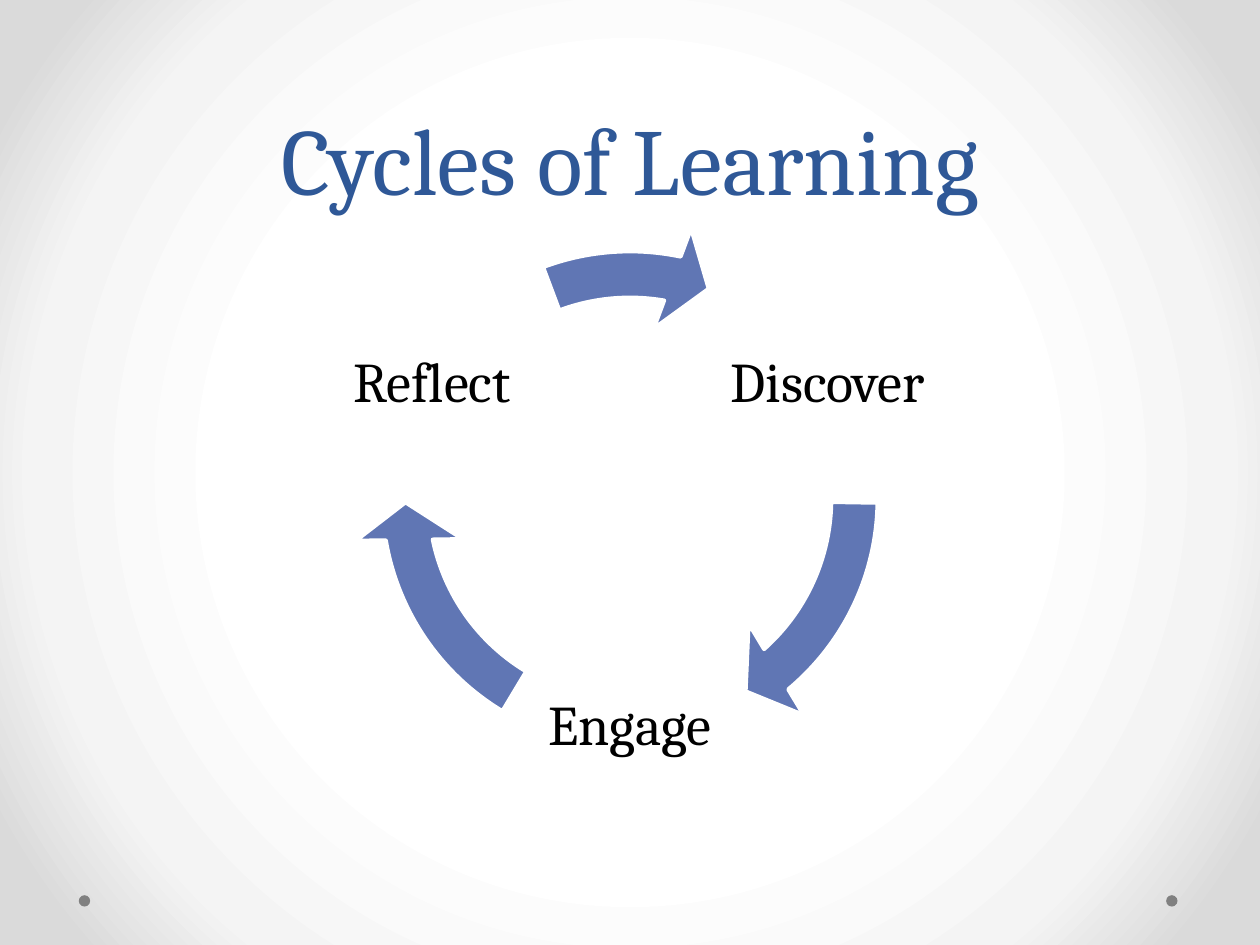
from pptx import Presentation
from pptx.dml.color import RGBColor
from pptx.enum.shapes import MSO_SHAPE
from pptx.enum.text import MSO_ANCHOR, MSO_AUTO_SIZE, PP_ALIGN
from pptx.oxml import parse_xml
from pptx.oxml.ns import nsdecls
from pptx.util import Inches, Pt

TITLE = "Cycles of Learning"
STAGES = [("Discover", 6.57, 3.05), ("Engage", 5, 5.77), ("Reflect", 3.43, 3.05)]
ARROWS = [(0.89, 49.36), (121.03, 169.5), (249.48, 280.91)]
BACKDROP = [(50, "FFFFFF"), (76, "F4F4F4"), (92, "DADADA")]

FONT = "Cambria"
NAVY = RGBColor(0x2F, 0x58, 0x97)
BLUE = RGBColor(0x60, 0x76, 0xB4)
GREY = RGBColor(0x80, 0x80, 0x80)
BLACK = RGBColor(0, 0, 0)
WHITE = RGBColor(0xFF, 0xFF, 0xFF)

WIDTH, HEIGHT = 10, 7.5
LABEL, RING, DOT = 1.87, 4.41, 0.09
RING_CENTER = (WIDTH / 2, 3.96)
THICKNESS, HEAD_WIDTH, HEAD_ANGLE = 0.083, 0.096, 9.61


def square(cx, cy, size):
    return [Inches(v) for v in (cx - size / 2, cy - size / 2, size, size)]


def degrees(angle):
    return angle * 60000 / 100000


def write(shape, text, size, color, anchor, spacing, margin=None):
    tf = shape.text_frame
    tf.word_wrap = True
    tf.auto_size = MSO_AUTO_SIZE.NONE
    tf.vertical_anchor = anchor
    if margin is not None:
        tf.margin_left = tf.margin_right = Inches(margin)
        tf.margin_top = tf.margin_bottom = Inches(margin)
    p = tf.paragraphs[0]
    p.alignment = PP_ALIGN.CENTER
    p.line_spacing = spacing
    r = p.add_run()
    r.text = text
    r.font.name = FONT
    r.font.size = Pt(size)
    r.font.color.rgb = color


def add_filled(s, kind, box, color):
    sp = s.shapes.add_shape(kind, *box)
    sp.shadow.inherit = False
    sp.fill.solid()
    sp.fill.fore_color.rgb = color
    sp.line.fill.background()
    return sp


def set_backdrop(s):
    stops = "".join(f'<a:gs pos="{pos * 1000}"><a:srgbClr val="{color}"/></a:gs>'
                    for pos, color in BACKDROP)
    s.background.fill.solid()
    bg_pr = s.element.cSld.bg.bgPr
    bg_pr.replace(bg_pr[0], parse_xml(
        f'<a:gradFill {nsdecls("a")} rotWithShape="1"><a:gsLst>{stops}</a:gsLst>'
        '<a:path path="circle"><a:fillToRect l="50000" t="50000" r="50000" b="50000"/>'
        '</a:path></a:gradFill>'))


def main():
    prs = Presentation()
    prs.slide_width, prs.slide_height = Inches(WIDTH), Inches(HEIGHT)
    s = prs.slides.add_slide(prs.slide_layouts[5])
    set_backdrop(s)

    title = s.shapes.title
    title.left, title.top = Inches(WIDTH * 0.05), 0
    title.width, title.height = Inches(WIDTH * 0.9), Inches(1.75)
    write(title, TITLE, 54, NAVY, MSO_ANCHOR.BOTTOM, Pt(58))

    for cx in (0.67, 9.3):
        add_filled(s, MSO_SHAPE.OVAL, square(cx, 7.15, DOT), GREY)

    for (text, cx, cy), (start, end) in zip(STAGES, ARROWS):
        label = s.shapes.add_textbox(*square(cx, cy, LABEL))
        write(label, text, 32, BLACK, MSO_ANCHOR.MIDDLE, 0.9, margin=0.04)
        arrow = add_filled(s, MSO_SHAPE.CIRCULAR_ARROW, square(*RING_CENTER, RING), BLUE)
        arrow.line.color.rgb = WHITE
        arrow.line.width = Pt(2.25)
        shape_values = (THICKNESS, degrees(HEAD_ANGLE), degrees(end), degrees(start), HEAD_WIDTH)
        for i, value in enumerate(shape_values):
            arrow.adjustments[i] = value

    prs.save("out.pptx")


if __name__ == "__main__":
    main()
